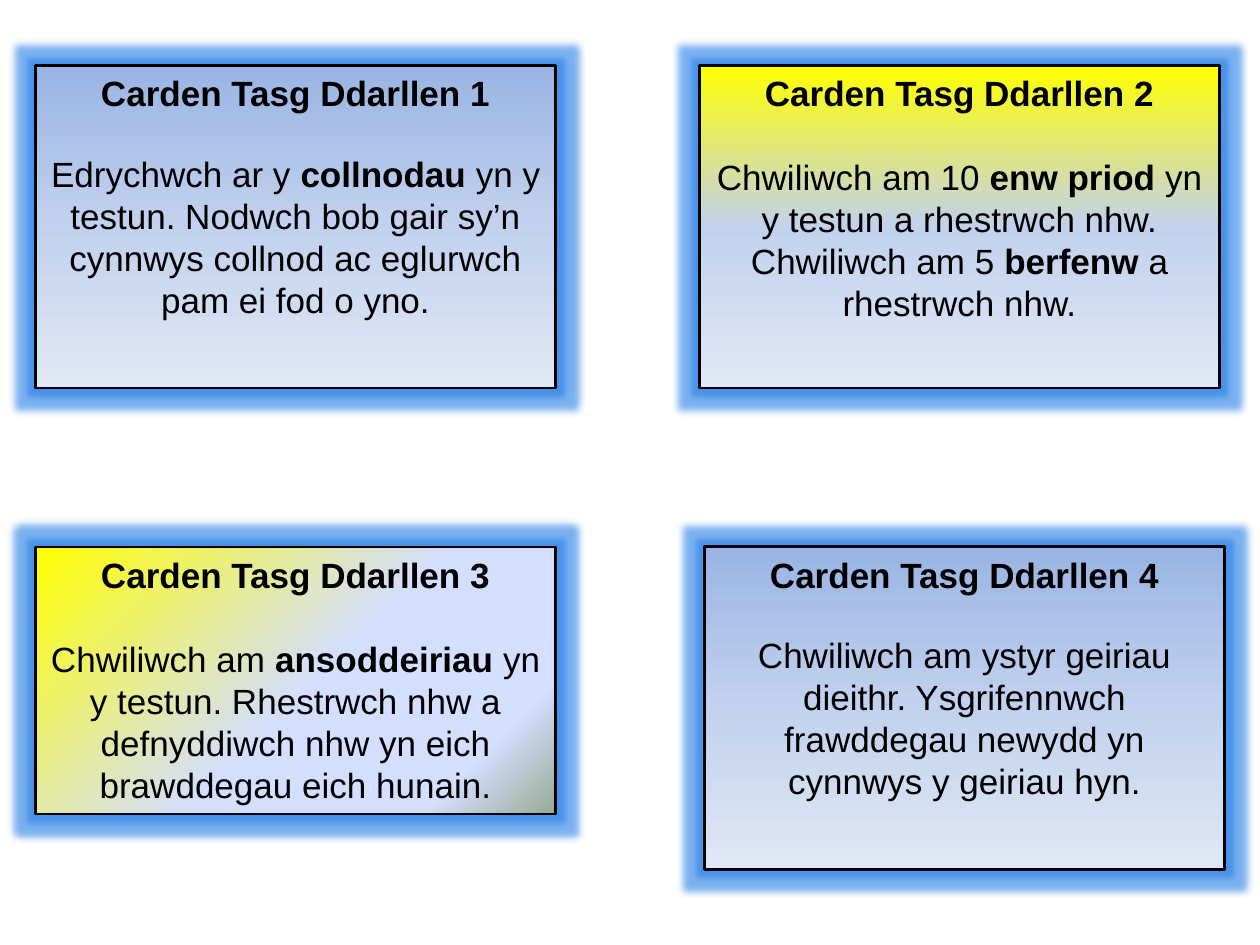
from dataclasses import dataclass

from lxml.etree import SubElement
from pptx import Presentation
from pptx.dml.color import RGBColor
from pptx.enum.shapes import MSO_SHAPE
from pptx.enum.text import MSO_ANCHOR, PP_ALIGN
from pptx.oxml.ns import qn
from pptx.util import Pt


@dataclass(frozen=True)
class Theme:
    """Colours, gradients and type of the task cards."""

    font: str = "Arial"
    size: int = 20
    ink: str = "000000"
    glow: str = "257DE6"
    glow_radius: int = 8
    glow_alpha: int = 60
    border: float = 1.5
    blue: tuple = ((0, "9AB5E4"), (50, "C2D1ED"), (100, "E1E8F5"))
    sunrise: tuple = ((0, "FFFF00"), (50, "C2D1ED"), (100, "E1E8F5"))
    meadow: tuple = ((0, "FFFF00"), (53, "D4DEFF"), (83, "D4DEFF"), (100, "96AB94"))


THEME = Theme()
LEFT, TOP, LOWER_TOP = 20.2, 37.4, 312.5
CARD_WIDTH, CARD_HEIGHT = 297.4, 184.3

CARDS = [
    (LEFT, TOP, CARD_HEIGHT, THEME.blue, 90, 22,
     [("Edrychwch ar y ", False), ("collnodau", True),
      (" yn y testun. Nodwch bob gair sy’n cynnwys collnod ac eglurwch pam ei fod o yno.", False)]),
    (399.6, TOP, CARD_HEIGHT, THEME.sunrise, 90, 24,
     [("Chwiliwch am 10 ", False), ("enw priod", True),
      (" yn y testun a rhestrwch nhw. Chwiliwch am 5 ", False),
      ("berfenw ", True), ("a rhestrwch nhw.", False)]),
    (LEFT, LOWER_TOP, 152.6, THEME.meadow, 45, 24,
     [("Chwiliwch am ", False), ("ansoddeiriau", True),
      (" yn y testun. Rhestrwch nhw a defnyddiwch nhw yn eich brawddegau eich hunain.", False)]),
    (402.5, LOWER_TOP, CARD_HEIGHT, THEME.blue, 90, 22,
     [("Chwiliwch am ystyr geiriau dieithr. Ysgrifennwch frawddegau newydd "
       "yn cynnwys y geiriau hyn.", False)]),
]


def add_colour(parent, colour):
    """Append an sRGB colour element and return it."""
    return SubElement(parent, qn("a:srgbClr"), val=colour)


def apply_gradient(card, stops, angle):
    """Fill the card with a linear gradient, its angle measured clockwise."""
    card.fill.gradient()
    card.fill.gradient_angle = 360 - angle
    stop_list = card._element.spPr.find(qn("a:gradFill")).find(qn("a:gsLst"))
    for old_stop in list(stop_list):
        stop_list.remove(old_stop)
    for position, colour in stops:
        add_colour(SubElement(stop_list, qn("a:gs"), pos=str(position * 1000)), colour)


def apply_glow(card):
    """Replace the card's shadow by a soft glow."""
    card.shadow.inherit = False
    effects = card._element.spPr.find(qn("a:effectLst"))
    glow = SubElement(effects, qn("a:glow"), rad=str(Pt(THEME.glow_radius)))
    SubElement(add_colour(glow, THEME.glow), qn("a:alpha"), val=str(THEME.glow_alpha * 1000))


def style_paragraph(paragraph):
    """Centre the paragraph and set its font."""
    paragraph.alignment = PP_ALIGN.CENTER
    paragraph.font.name = THEME.font
    paragraph.font.size = Pt(THEME.size)
    paragraph.font.color.rgb = RGBColor.from_string(THEME.ink)


def write_task(card, heading_text, gap, task_runs):
    """Write the bold heading and the task below it."""
    frame = card.text_frame
    frame.word_wrap = True
    frame.vertical_anchor = MSO_ANCHOR.TOP
    heading = frame.paragraphs[0]
    heading.text = heading_text
    style_paragraph(heading)
    heading.font.bold = True
    heading.space_after = Pt(gap)
    task = frame.add_paragraph()
    style_paragraph(task)
    for words, bold in task_runs:
        run = task.add_run()
        run.text = words
        run.font.bold = bold


def add_card(slide, number, left, top, height, stops, angle, gap, task_runs):
    """Add one numbered reading task card."""
    card = slide.shapes.add_shape(
        MSO_SHAPE.RECTANGLE, Pt(left), Pt(top), Pt(CARD_WIDTH), Pt(height))
    apply_gradient(card, stops, angle)
    card.line.color.rgb = RGBColor.from_string(THEME.ink)
    card.line.width = Pt(THEME.border)
    apply_glow(card)
    write_task(card, f"Carden Tasg Ddarllen {number}", gap, task_runs)


def main():
    """Build the slide of four reading task cards."""
    presentation = Presentation()
    presentation.slide_width, presentation.slide_height = Pt(720), Pt(540)
    slide = presentation.slides.add_slide(presentation.slide_layouts[6])
    for number, card_details in enumerate(CARDS, start=1):
        add_card(slide, number, *card_details)
    presentation.save("out.pptx")


if __name__ == "__main__":
    main()
